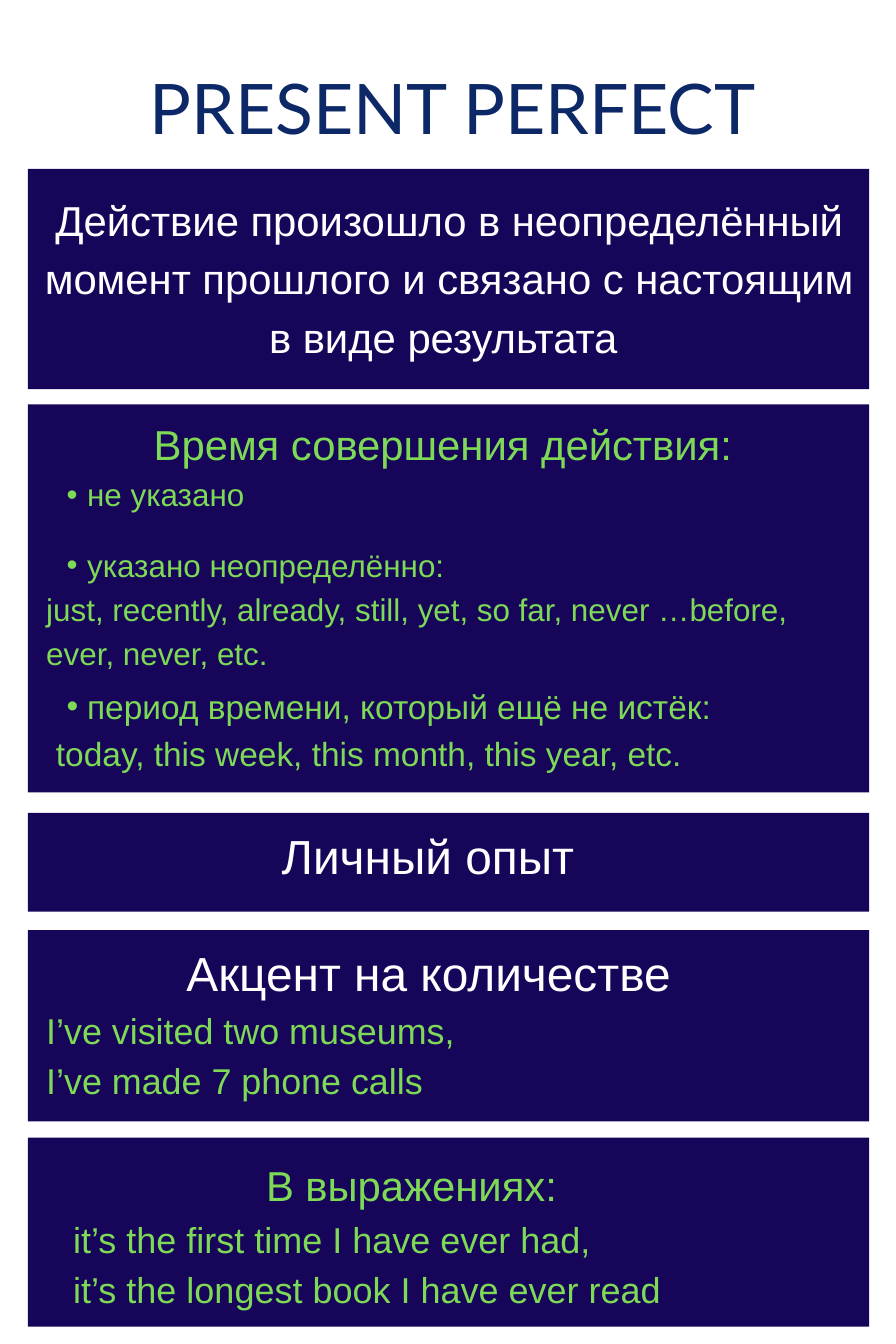
from lxml import etree
from pptx import Presentation
from pptx.dml.color import RGBColor
from pptx.enum.shapes import MSO_SHAPE
from pptx.enum.text import PP_ALIGN
from pptx.oxml.ns import qn
from pptx.util import Inches, Pt

RECT = MSO_SHAPE.RECTANGLE
LEFT, CENTER = PP_ALIGN.LEFT, PP_ALIGN.CENTER
COLORS = {"title": "0C2866", "panel": "160559", "white": "FFFFFF", "green": "7ED957"}
LEADING = 1.4
PANEL_X, PANEL_W = 0.26, 7.82


def heading(text, color="white", size=28):
    return dict(text=text, color=color, size=size, align=CENTER)


def body(text, size, indent=0):
    return dict(text=text, color="green", size=size, margin=indent)


def bullet(text, size):
    return dict(text=text, color="green", size=size, margin=0.38, hang=0.19)


def add_para(p, text, color, size, align=LEFT, margin=0, hang=0,
             font="Arial", leading=LEADING):
    p.alignment = align
    p.line_spacing = Pt(round(size * leading, 1))
    pPr = p._p.get_or_add_pPr()
    pPr.set("marL", str(Inches(margin)))
    pPr.set("indent", str(-Inches(hang)))
    if hang:
        etree.SubElement(pPr, qn("a:buFont")).set("typeface", "Arial")
        etree.SubElement(pPr, qn("a:buChar")).set("char", "•")
    r = p.add_run()
    r.text = text
    r.font.name = font
    r.font.size = Pt(size)
    r.font.color.rgb = RGBColor.from_string(COLORS[color])


def add_text(s, x, y, w, h, paras):
    tf = s.shapes.add_textbox(Inches(x), Inches(y), Inches(w), Inches(h)).text_frame
    tf.word_wrap = True
    tf.margin_left = tf.margin_right = tf.margin_top = tf.margin_bottom = 0
    for i, para in enumerate(paras):
        add_para(tf.add_paragraph() if i else tf.paragraphs[0], **para)


def add_title(s, x, y, w, h):
    add_text(s, x, y, w, h, [dict(text="PRESENT PERFECT", color="title", size=46.7,
                                  align=CENTER, font="Lato", leading=1.34)])


def add_panel(s, x, y, w, h, blocks):
    sp = s.shapes.add_shape(RECT, Inches(x), Inches(y), Inches(w), Inches(h))
    sp.shadow.inherit = False
    sp.fill.solid()
    sp.fill.fore_color.rgb = RGBColor.from_string(COLORS["panel"])
    sp.line.fill.background()
    for dx, dy, bw, bh, paras in blocks:
        add_text(s, x + dx, y + dy, bw, bh, paras)


PANELS = [
    (1.57, 2.05, [
        (-0.24, 0.16, 8.31, 1.64, [
            heading("Действие произошло в неопределённый момент прошлого "
                    "и связано с настоящим"),
            heading("в виде результата ")]),
    ]),
    (3.76, 3.61, [
        (0.17, 0.06, 7.48, 0.98, [
            heading("Время совершения действия: ", "green"),
            bullet("не указано", 21)]),
        (0.17, 1.26, 7.48, 1.23, [
            bullet("указано неопределённо:", 21),
            body("just, recently, already, still, yet, so far, never …before, "
                 "ever, never, etc.", 21)]),
        (0.17, 2.56, 7.48, 0.86, [
            bullet("период времени, который ещё не истёк:", 22.4),
            body("today, this week, this month, this year, etc.", 22.4, 0.09)]),
    ]),
    (7.56, 0.92, [
        (0.17, 0.04, 7.1, 0.63, [heading("Личный опыт", size=32)]),
    ]),
    (8.65, 1.78, [
        (0.17, 0.04, 7.24, 1.57, [
            heading("Акцент на количестве ", size=32),
            body("I’ve visited two museums,", 24),
            body("I’ve made 7 phone calls", 24)]),
    ]),
    (10.58, 1.76, [
        (0.42, 0.13, 6.29, 1.47, [
            heading("В выражениях:", "green"),
            body("it’s the first time I have ever had,", 24.1),
            body("it’s the longest book I have ever read", 24.1)]),
    ]),
]


def main():
    prs = Presentation()
    prs.slide_width, prs.slide_height = Inches(8.33), Inches(12.5)
    s = prs.slides.add_slide(prs.slide_layouts[6])
    add_title(s, 0.09, 0.51, 8.24, 0.84)
    for top, height, blocks in PANELS:
        add_panel(s, PANEL_X, top, PANEL_W, height, blocks)
    prs.save("out.pptx")


if __name__ == "__main__":
    main()
